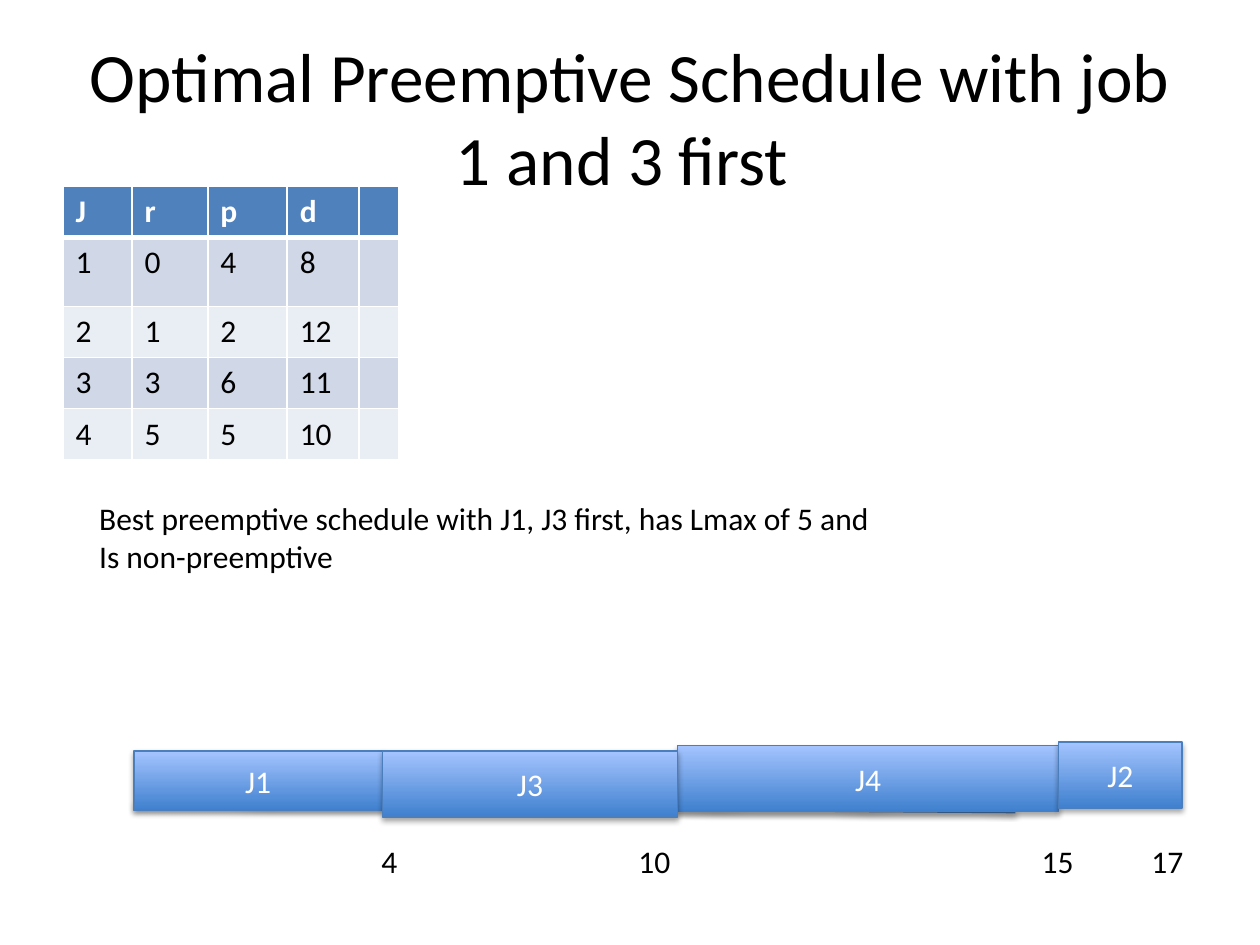
import pptx
import pptx.util
import pptx.dml.color
import pptx.enum.shapes
import pptx.enum.text
import pptx.oxml
import pptx.oxml.ns
from pptx.util import Cm

ALIGN = pptx.enum.text.PP_ALIGN
ANCHOR = pptx.enum.text.MSO_ANCHOR
NAMESPACE = pptx.oxml.ns.nsdecls("a")


def color(hex_string):
    """Turn a hex string into a colour."""
    return pptx.dml.color.RGBColor.from_string(hex_string)


def apply(target, values):
    """Set each attribute named in a dict of format values."""
    for name, value in values.items():
        setattr(target, name, value)


class SlideBuilder:
    """Hold the style and the current slide, and add elements to it."""

    accent = "4F81BD"
    bands = ("D0D8E8", "E9EDF4")
    gradient = ("3F80CE", "A4C4FF")
    bar_line = "4B7EBC"
    body = {"name": "Calibri", "size": pptx.util.Pt(18), "bold": False}
    heading = {"name": "Calibri", "size": pptx.util.Pt(39.6), "bold": False}

    def __init__(self, slide):
        """Keep the slide to build on."""
        self.slide = slide

    def fill_text(self, frame, lines, font=None, ink="000000", align=ALIGN.LEFT):
        """Put one formatted paragraph in the frame for each line."""
        for index, line in enumerate(lines):
            paragraph = frame.add_paragraph() if index else frame.paragraphs[0]
            paragraph.alignment = align
            run = paragraph.add_run()
            run.text = line
            apply(run.font, font or self.body)
            run.font.color.rgb = color(ink)

    def shadow(self, shape, opacity, distance):
        """Give a shape a soft shadow that falls straight down."""
        effects = pptx.oxml.parse_xml(
            f'<a:effectLst {NAMESPACE}><a:outerShdw blurRad="40000" dist="{distance}" '
            f'dir="5400000" rotWithShape="0"><a:srgbClr val="000000">'
            f'<a:alpha val="{opacity * 1000}"/></a:srgbClr></a:outerShdw></a:effectLst>')
        shape._element.spPr.append(effects)

    def title(self, text, left, top, width, height):
        """Place and fill the title placeholder."""
        title = self.slide.shapes.title
        apply(title, {"left": Cm(left), "top": Cm(top),
                      "width": Cm(width), "height": Cm(height)})
        apply(title.text_frame, {"auto_size": pptx.enum.text.MSO_AUTO_SIZE.NONE,
                                 "vertical_anchor": ANCHOR.MIDDLE, "word_wrap": True})
        self.fill_text(title.text_frame, [text], self.heading, align=ALIGN.CENTER)

    def text(self, lines, left, top, width, height):
        """Add a text box."""
        box = self.slide.shapes.add_textbox(Cm(left), Cm(top), Cm(width), Cm(height))
        box.text_frame.word_wrap = True
        self.fill_text(box.text_frame, lines)

    def cell(self, cell, text, row):
        """Format one table cell with white borders."""
        properties = cell._tc.get_or_add_tcPr()
        header = row == 0
        for side in "LRTB":
            thick = (header and side == "B") or (row == 1 and side == "T")
            properties.append(pptx.oxml.parse_xml(
                f'<a:ln{side} {NAMESPACE} w="{38100 if thick else 12700}"><a:solidFill>'
                f'<a:srgbClr val="FFFFFF"/></a:solidFill></a:ln{side}>'))
        cell.fill.solid()
        cell.fill.fore_color.rgb = color(self.accent if header else self.bands[(row - 1) % 2])
        if text:
            font = {**self.body, "bold": header}
            self.fill_text(cell.text_frame, [text], font, "FFFFFF" if header else "000000")

    def table(self, rows, left, top, widths, heights):
        """Add a table with a header and banded rows."""
        table = self.slide.shapes.add_table(
            len(rows), len(widths), Cm(left), Cm(top),
            Cm(sum(widths)), Cm(sum(heights))).table
        for column, width in zip(table.columns, widths):
            column.width = Cm(width)
        for index, (texts, height) in enumerate(zip(rows, heights)):
            table.rows[index].height = Cm(height)
            for position, text in enumerate(texts):
                self.cell(table.cell(index, position), text, index)

    def line(self, *ends):
        """Add a straight line from its two end points."""
        line = self.slide.shapes.add_connector(
            pptx.enum.shapes.MSO_CONNECTOR.STRAIGHT, *map(Cm, ends))
        line.line.width = pptx.util.Pt(2)
        line.line.color.rgb = color(self.accent)
        self.shadow(line, 38, 20000)

    def bar(self, text, left, top, width, height):
        """Add a job bar with a vertical gradient."""
        bar = self.slide.shapes.add_shape(
            pptx.enum.shapes.MSO_SHAPE.RECTANGLE, Cm(left), Cm(top), Cm(width), Cm(height))
        bar.fill.gradient()
        bar.fill.gradient_angle = 90
        for stop, position, shade in zip(bar.fill.gradient_stops, (0, 1), self.gradient):
            stop.position = position
            stop.color.rgb = color(shade)
        bar.line.width = pptx.util.Pt(0.75)
        bar.line.color.rgb = color(self.bar_line)
        self.shadow(bar, 35, 23000)
        bar.text_frame.vertical_anchor = ANCHOR.MIDDLE
        self.fill_text(bar.text_frame, [text], ink="FFFFFF", align=ALIGN.CENTER)


def main():
    """Build the schedule slide and save it."""
    presentation = pptx.Presentation()
    apply(presentation, {"slide_width": Cm(25.4), "slide_height": Cm(19.05)})
    builder = SlideBuilder(presentation.slides.add_slide(presentation.slide_layouts[5]))

    builder.title("Optimal Preemptive Schedule with job 1 and 3 first ", 1.27, 0.76, 22.86, 3.18)
    jobs = [
        ("J", "r", "p", "d", ""),
        ("1", "0", "4", "8", ""),
        ("2", "1", "2", "12", ""),
        ("3", "3", "6", "11", ""),
        ("4", "5", "5", "10", ""),
    ]
    builder.table(jobs, 1.27, 3.76, (1.39, 1.53, 1.6, 1.45, 0.79), (1.03, 1.39, 1.03, 1.03, 1.03))
    builder.text(["Best preemptive schedule with J1, J3 first, has Lmax of 5 and",
                  "Is non-preemptive"], 1.75, 9.93, 16.4, 2.56)

    builder.line(2.69, 16.23, 20.47, 16.36)
    for job, left, top, width, height in (
            ("J1", 2.7, 15.14, 5.01, 1.2), ("J4", 13.66, 15.03, 7.68, 1.33),
            ("J3", 7.71, 15.14, 5.95, 1.33), ("J2", 21.34, 14.96, 2.49, 1.33)):
        builder.bar(job, left, top, width, height)
    for time, left, width in (("4", 7.44, 1.17), ("10", 12.62, 1.65),
                              ("15", 20.75, 1.17), ("17", 22.96, 1.17)):
        builder.text([time], left, 16.84, width, 1.02)

    presentation.save("out.pptx")


if __name__ == "__main__":
    main()
